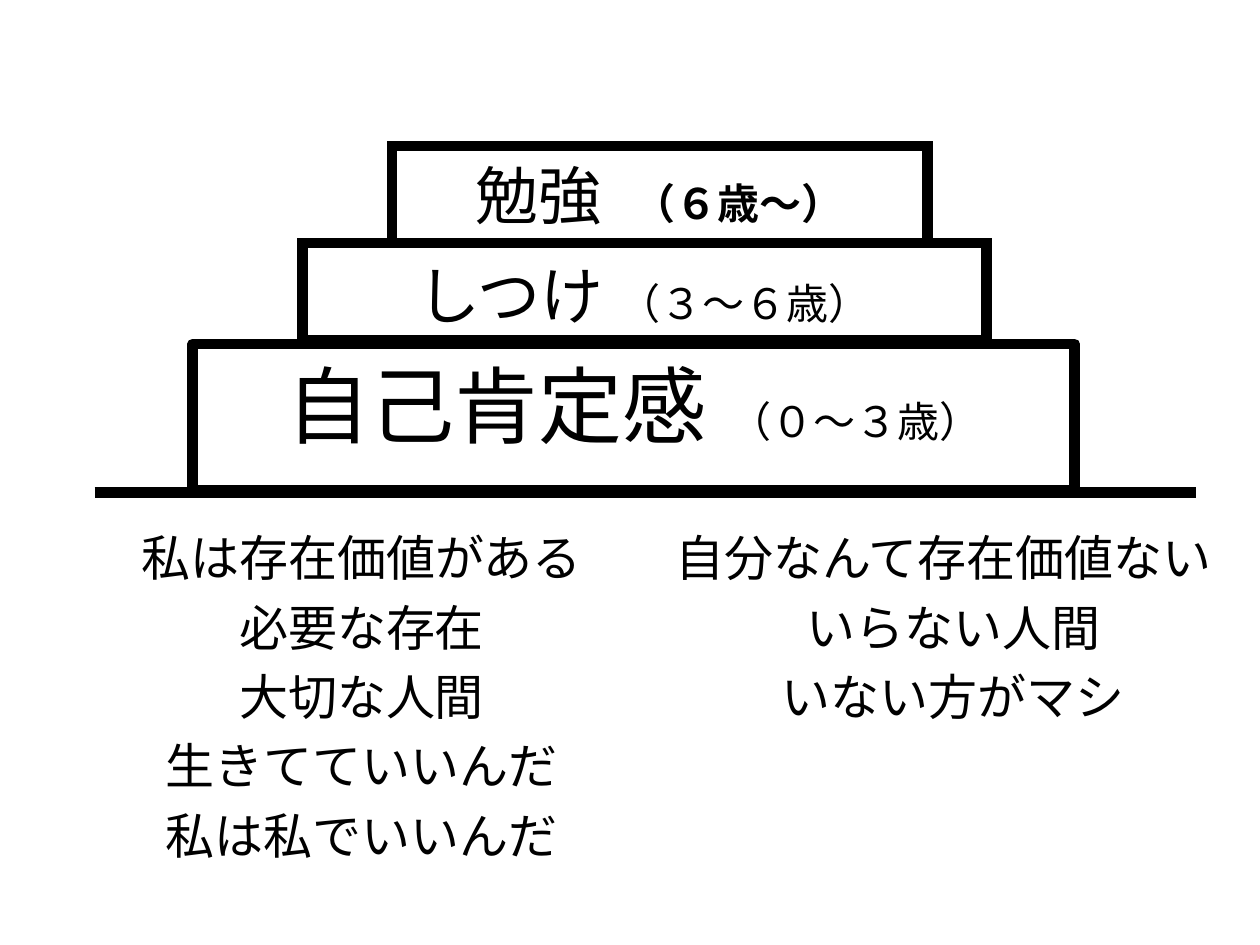
"""Build a slide showing three stacked stages of child development."""
from lxml.etree import SubElement
from pptx import Presentation
from pptx.dml.color import RGBColor
from pptx.enum.lang import MSO_LANGUAGE_ID
from pptx.enum.shapes import MSO_CONNECTOR, MSO_SHAPE
from pptx.enum.text import MSO_ANCHOR, PP_ALIGN
from pptx.oxml.ns import qn
from pptx.util import Inches, Pt

BLACK = "000000"
BODY_FONT = "Arial"
BLOCK_FONT = "Noto Sans CJK JP"

FOUNDATION = {
    "place": (1.53, 2.73, 7, 1.16), "font": BODY_FONT, "join": "round",
    "runs": [("自己肯定感 ", 48, False), ("（０～３歳）", 24, False)],
}
DISCIPLINE = {
    "place": (2.4, 1.93, 5.43, 0.77), "font": BLOCK_FONT, "join": "miter",
    "runs": [("しつけ", 36, False), (" ", 40, False), ("（３～６歳）", 24, False)],
}
STUDY = {
    "place": (3.11, 1.16, 4.25, 0.77), "font": BLOCK_FONT, "join": "miter",
    "runs": [("勉強", 36, False), ("　", 18, False), ("（６歳～）", 24, True)],
}
GROUND = (0.75, 3.91, 9.49, 3.91)

POSITIVE = [(text, 0.9, 3.94) for text in (
    "私は存在価値がある", "必要な存在", "大切な人間", "生きてていいんだ", "私は私でいいんだ")]
NEGATIVE = [
    ("自分なんて存在価値ない", 5.24, 4.49),
    ("いらない人間", 5.87, 3.39),
    ("いない方がマシ", 5.87, 3.39),
]
LABEL_TOP, LABEL_PITCH, LABEL_SIZE = 4.14, 0.55, 28


def color(value):
    return RGBColor.from_string(value)


def write(frame, runs, font_name):
    para = frame.paragraphs[0]
    para.alignment = PP_ALIGN.CENTER
    for text, size, bold in runs:
        span = para.add_run()
        span.text = text
        span.font.size = Pt(size)
        span.font.bold = bold
        span.font.name = font_name
        span.font.language_id = MSO_LANGUAGE_ID.JAPANESE
        span.font.color.rgb = color(BLACK)
        SubElement(span.font._element, qn("a:ea"), typeface=font_name)
    return para


def set_line(line, join="round"):
    line.color.rgb = color(BLACK)
    line.width = Pt(6)
    SubElement(line._get_or_add_ln(), qn(f"a:{join}"))


def add_block(page, block):
    box = page.shapes.add_shape(MSO_SHAPE.RECTANGLE, *map(Inches, block["place"]))
    box.shadow.inherit = False
    box.fill.background()
    set_line(box.line, block["join"])
    box.text_frame.word_wrap = True
    box.text_frame.vertical_anchor = MSO_ANCHOR.MIDDLE
    return box.text_frame, write(box.text_frame, block["runs"], block["font"])


def add_ground(page):
    ground = page.shapes.add_connector(MSO_CONNECTOR.STRAIGHT, *map(Inches, GROUND))
    set_line(ground.line)
    SubElement(ground._element.spPr, qn("a:effectLst"))


def add_labels(page, labels):
    for row, (text, left, width) in enumerate(labels):
        top = LABEL_TOP + row * LABEL_PITCH
        box = page.shapes.add_textbox(*map(Inches, (left, top, width, LABEL_PITCH)))
        write(box.text_frame, [(text, LABEL_SIZE, False)], BODY_FONT)


def main():
    deck = Presentation()
    deck.slide_width, deck.slide_height = Inches(10), Inches(7.5)
    page = deck.slides.add_slide(deck.slide_layouts[6])

    frame, para = add_block(page, FOUNDATION)
    frame.vertical_anchor = MSO_ANCHOR.TOP
    frame.margin_top = Inches(0.17)
    para.line_spacing = 0.9
    add_ground(page)
    add_block(page, DISCIPLINE)
    add_block(page, STUDY)
    add_labels(page, POSITIVE)
    add_labels(page, NEGATIVE)
    deck.save("out.pptx")


if __name__ == "__main__":
    main()
